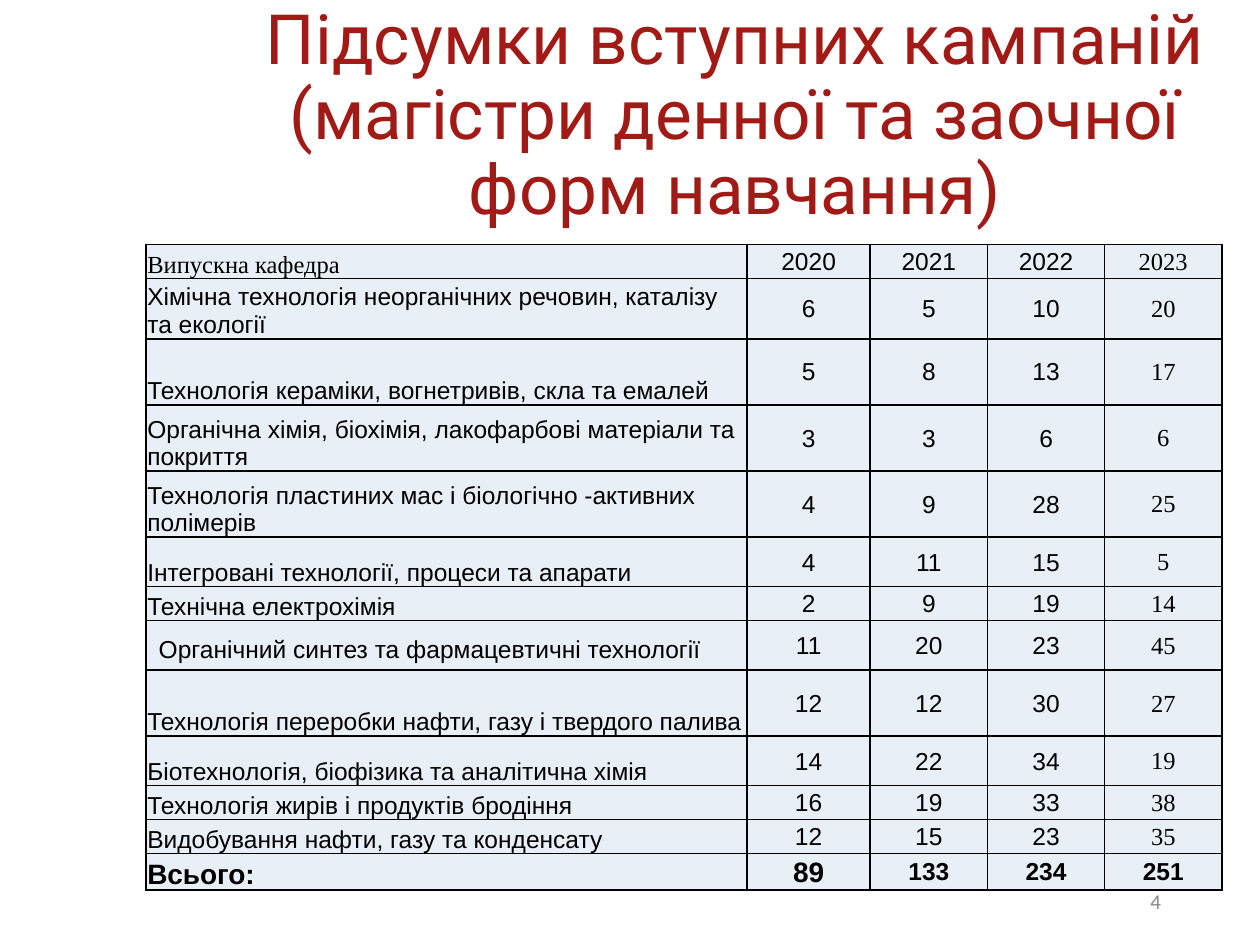
from lxml.etree import SubElement
from pptx import Presentation
from pptx.dml.color import RGBColor
from pptx.enum.text import MSO_ANCHOR as Anchor, PP_ALIGN as Align
from pptx.oxml.ns import qn
from pptx.util import Pt

SANS, SERIF = "Arial", "Times New Roman"
YEARS = ["2020", "2021", "2022", "2023"]
DEPARTMENTS = [
    ("Хімічна технологія неорганічних речовин, каталізу та екології", 34.5, [6, 5, 10, 20]),
    ("Технологія кераміки, вогнетривів, скла та емалей", 37.8, [5, 8, 13, 17]),
    ("Органічна хімія, біохімія, лакофарбові матеріали та покриття", 37.8, [3, 3, 6, 6]),
    ("Технологія пластиних мас і біологічно -активних полімерів", 37.8, [4, 9, 28, 25]),
    ("Інтегровані технології, процеси та апарати", 28.3, [4, 11, 15, 5]),
    ("Технічна електрохімія", 19.4, [2, 9, 19, 14]),
    ("Органічний синтез та фармацевтичні технології", 28.3, [11, 20, 23, 45]),
    ("Технологія переробки нафти, газу і твердого палива", 37.8, [12, 12, 30, 27]),
    ("Біотехнологія, біофізика та аналітична хімія", 28.3, [14, 22, 34, 19]),
    ("Технологія жирів і продуктів бродіння", 19.4, [16, 19, 33, 38]),
    ("Видобування нафти, газу та конденсату", 19.4, [12, 15, 23, 35]),
]
PADDED_ROW = 7


def rgb(color):
    return RGBColor.from_string(color)


def style(p, size, font, color, align, bold=False):
    p.alignment = align
    p.font.size = Pt(size)
    p.font.name = font
    p.font.bold = bold
    p.font.color.rgb = rgb(color)


def add_text(slide, text, box, size, font, color, align):
    sp = slide.shapes.add_textbox(*map(Pt, box))
    tf = sp.text_frame
    tf.word_wrap = True
    tf.vertical_anchor = Anchor.MIDDLE
    p = tf.paragraphs[0]
    p.text = text
    style(p, size, font, color, align)
    return p


def set_borders(cell, color, width):
    tc_pr = cell._tc.get_or_add_tcPr()
    for i, side in enumerate(("a:lnL", "a:lnR", "a:lnT", "a:lnB")):
        ln = SubElement(tc_pr, qn(side), w=str(Pt(width)))
        fill = SubElement(ln, qn("a:solidFill"))
        SubElement(fill, qn("a:srgbClr"), val=color)
        tc_pr.insert(i, ln)


def fill_cell(cell, text, size, font, bold, is_label, padded):
    cell.fill.solid()
    cell.fill.fore_color.rgb = rgb("E9EFF7")
    set_borders(cell, "000000", 1)
    if not padded:
        cell.margin_left = cell.margin_right = cell.margin_top = Pt(0.7)
        cell.margin_bottom = Pt(0)
    cell.vertical_anchor = Anchor.BOTTOM if is_label else Anchor.MIDDLE
    p = cell.text_frame.paragraphs[0]
    p.text = str(text)
    style(p, size, font, "000000", Align.LEFT if is_label else Align.CENTER, bold)


def add_admissions_table(slide):
    rows = [
        ("Випускна кафедра", 19.4, YEARS),
        *DEPARTMENTS,
        ("Всього:", 20.9, [89, 133, 234, 251]),
    ]
    widths = [343.4, 70.4, 67, 67, 67]
    heights = [height for _, height, _ in rows]
    frame = slide.shapes.add_table(
        len(rows), len(widths), Pt(83.5), Pt(139.7), Pt(sum(widths)), Pt(sum(heights)))
    table = frame.table
    for column, width in zip(table.columns, widths):
        column.width = Pt(width)
    last = len(rows) - 1
    for r, (label, height, values) in enumerate(rows):
        table.rows[r].height = Pt(height)
        for c, text in enumerate([label, *values]):
            total = r == last
            serif = (c == 4 and not total) or (r == 0 and c == 0)
            size = 16 if total and c < 2 else 14
            fill_cell(table.cell(r, c), text, size, SERIF if serif else SANS,
                      total, c == 0, c == 0 and r == PADDED_ROW)


def main():
    prs = Presentation()
    prs.slide_width, prs.slide_height = Pt(720), Pt(540)
    slide = prs.slides.add_slide(prs.slide_layouts[6])
    title = add_text(
        slide, "Підсумки вступних кампаній (магістри денної та заочної форм навчання)",
        (120, 8, 600, 117.5), 39.6, "Roboto", "A11A16", Align.CENTER)
    title.line_spacing = 0.9
    add_text(slide, "4", (508.5, 500.5, 162, 28.75), 12, "Calibri", "888888", Align.RIGHT)
    add_admissions_table(slide)
    prs.save("out.pptx")


if __name__ == "__main__":
    main()
